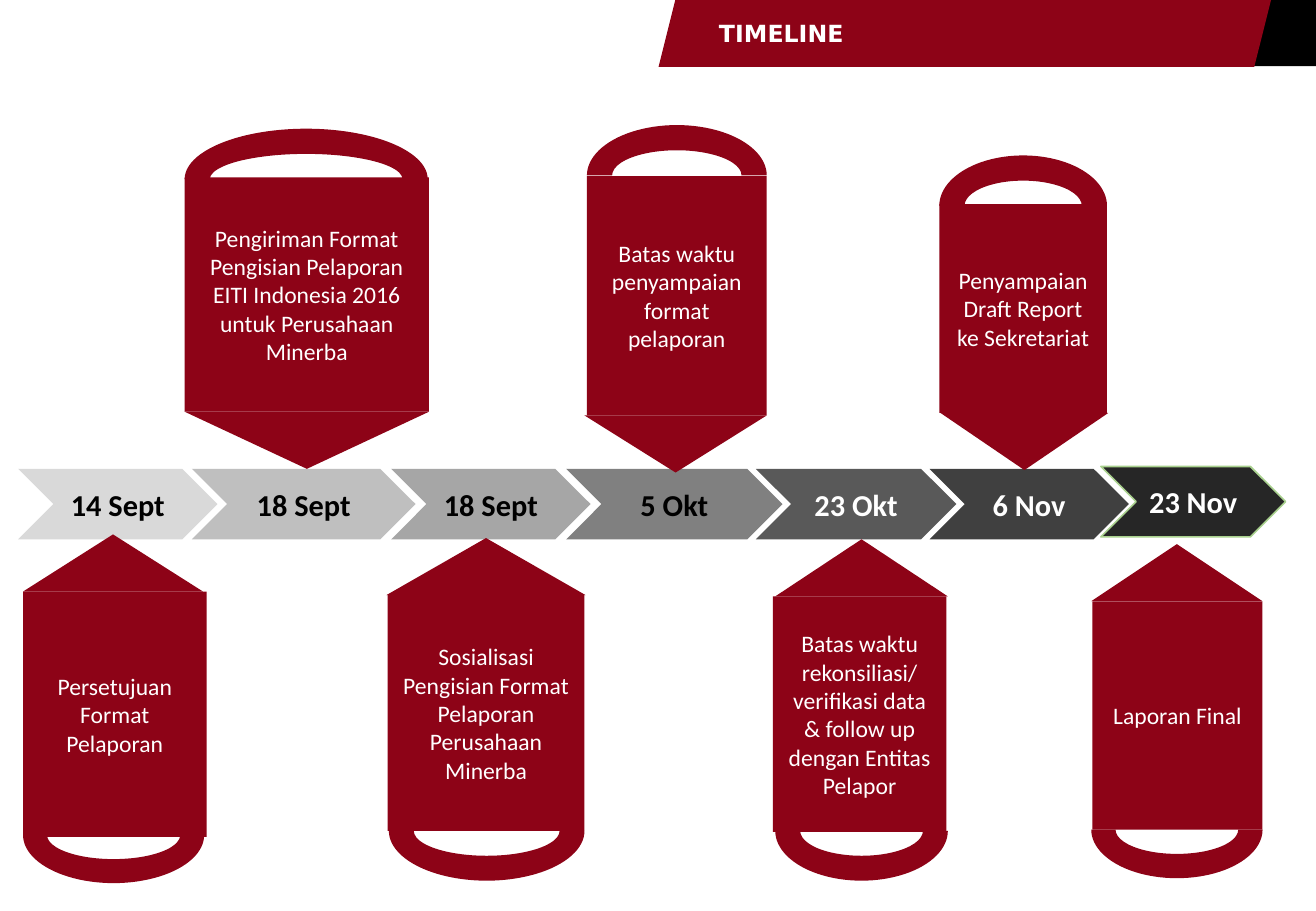
"""Build the reporting timeline slide, laid out in px at 100 px to the inch."""
from dataclasses import dataclass
from typing import NamedTuple

from pptx import Presentation
from pptx.dml.color import RGBColor
from pptx.enum.shapes import MSO_SHAPE
from pptx.enum.text import MSO_ANCHOR, PP_ALIGN
from pptx.shapes.autoshape import Shape
from pptx.slide import Slide
from pptx.util import Pt

RECT = MSO_SHAPE.RECTANGLE
TRIANGLE = MSO_SHAPE.ISOSCELES_TRIANGLE
ARC = MSO_SHAPE.BLOCK_ARC
CHEVRON = MSO_SHAPE.CHEVRON
PARALLELOGRAM = MSO_SHAPE.PARALLELOGRAM
MANUAL_INPUT = MSO_SHAPE.FLOWCHART_MANUAL_INPUT
MIDDLE = MSO_ANCHOR.MIDDLE
LEFT, CENTER = PP_ALIGN.LEFT, PP_ALIGN.CENTER

EMU_PER_PX = 9144
SLIDE_W, SLIDE_H = 1083, 750
TIP_H = 47
CHEVRON_H = 58


@dataclass(frozen=True)
class Theme:
    red: str = "8D0317"
    black: str = "000000"
    white: str = "FFFFFF"
    green: str = "A9D18E"
    body_font: str = "Calibri"
    title_font: str = "DejaVu Sans"
    text_size: int = 14
    date_size: int = 18


class Box(NamedTuple):
    x: int
    y: int
    w: int
    h: int


class Milestone(NamedTuple):
    date: str
    x: int
    w: int
    fill: str
    color: str
    y: int = 386
    line: str | None = None


class Banner(NamedTuple):
    text: str
    body: Box
    tip_x: int
    tip_w: int
    arc: Box
    above: bool


THEME = Theme()

MILESTONES = [
    Milestone("14 Sept", 15, 164, "D9D9D9", THEME.black),
    Milestone("18 Sept", 158, 184, "BFBFBF", THEME.black),
    Milestone("18 Sept", 322, 164, "A6A6A6", THEME.black),
    Milestone("5 Okt", 466, 178, "808080", THEME.black),
    Milestone("23 Okt", 622, 165, "595959", THEME.white),
    Milestone("6 Nov", 765, 164, "404040", THEME.white),
    Milestone("23 Nov", 906, 152, "262626", THEME.white, 384, THEME.green),
]

BANNERS = [
    Banner("Persetujuan Format Pelaporan",
           Box(19, 487, 151, 202), 19, 148, Box(19, 648, 149, 79), False),
    Banner("Pengiriman Format Pengisian Pelaporan EITI Indonesia 2016 "
           "untuk Perusahaan Minerba",
           Box(152, 146, 201, 193), 152, 201, Box(152, 106, 200, 83), True),
    Banner("Sosialisasi Pengisian Format Pelaporan Perusahaan Minerba",
           Box(319, 490, 162, 194), 318, 164, Box(320, 643, 161, 82), False),
    Banner("Batas waktu penyampaian format pelaporan",
           Box(483, 145, 148, 197), 481, 150, Box(483, 103, 148, 83), True),
    Banner("Batas waktu rekonsiliasi/\n"
           "verifikasi data & follow up dengan Entitas Pelapor",
           Box(636, 491, 143, 194), 638, 142, Box(638, 643, 142, 82), False),
    Banner("Penyampaian Draft Report ke Sekretariat",
           Box(773, 168, 138, 172), 774, 138, Box(773, 128, 138, 83), True),
    Banner("Laporan Final",
           Box(899, 495, 140, 188), 898, 141, Box(898, 643, 141, 80), False),
]


def px(n: int) -> int:
    return n * EMU_PER_PX


def add_block(s: Slide, kind: MSO_SHAPE, box: Box, fill: str, *,
              line: str | None = None, rotation: int = 0) -> Shape:
    sp = s.shapes.add_shape(kind, *map(px, box))
    sp.shadow.inherit = False
    sp.rotation = rotation
    sp.fill.solid()
    sp.fill.fore_color.rgb = RGBColor.from_string(fill)
    if line:
        sp.line.color.rgb = RGBColor.from_string(line)
        sp.line.width = Pt(1)
    else:
        sp.line.fill.background()
    return sp


def set_text(sp: Shape, text: str, *, size: int = THEME.text_size,
             color: str = THEME.white, font: str = THEME.body_font,
             bold: bool = False, align: PP_ALIGN = CENTER) -> None:
    tf = sp.text_frame
    tf.word_wrap = True
    tf.vertical_anchor = MIDDLE
    tf.text = text
    for p in tf.paragraphs:
        p.alignment = align
        for r in p.runs:
            r.font.name = font
            r.font.size = Pt(size)
            r.font.bold = bold
            r.font.color.rgb = RGBColor.from_string(color)


def add_milestone(s: Slide, m: Milestone) -> None:
    box = Box(m.x, m.y, m.w, CHEVRON_H)
    sp = add_block(s, CHEVRON, box, m.fill, line=m.line)
    set_text(sp, m.date, size=THEME.date_size, color=m.color, bold=True)


def add_banner(s: Slide, b: Banner) -> None:
    tip_y = b.body.y + b.body.h if b.above else b.body.y - TIP_H
    tip = Box(b.tip_x, tip_y, b.tip_w, TIP_H)
    add_block(s, TRIANGLE, tip, THEME.red, rotation=180 if b.above else 0)
    set_text(add_block(s, RECT, b.body, THEME.red), b.text)
    add_block(s, ARC, b.arc, THEME.red, rotation=0 if b.above else 180)


def add_header(s: Slide) -> None:
    corner = add_block(s, MANUAL_INPUT, Box(1010, -20, 55, 94), THEME.black,
                       rotation=90)
    corner.element.spPr.get_or_add_xfrm().set("flipV", "1")
    sp = add_block(s, PARALLELOGRAM, Box(542, 0, 504, 55), THEME.red)
    set_text(sp, "TIMELINE", font=THEME.title_font, bold=True, align=LEFT)
    tf = sp.text_frame
    tf.margin_left = tf.margin_right = px(2)
    tf.margin_top = tf.margin_bottom = px(5)


def main() -> None:
    prs = Presentation()
    prs.slide_width, prs.slide_height = px(SLIDE_W), px(SLIDE_H)
    s = prs.slides.add_slide(prs.slide_layouts[6])
    for m in MILESTONES:
        add_milestone(s, m)
    for b in BANNERS:
        add_banner(s, b)
    add_header(s)
    prs.save("out.pptx")


if __name__ == "__main__":
    main()
